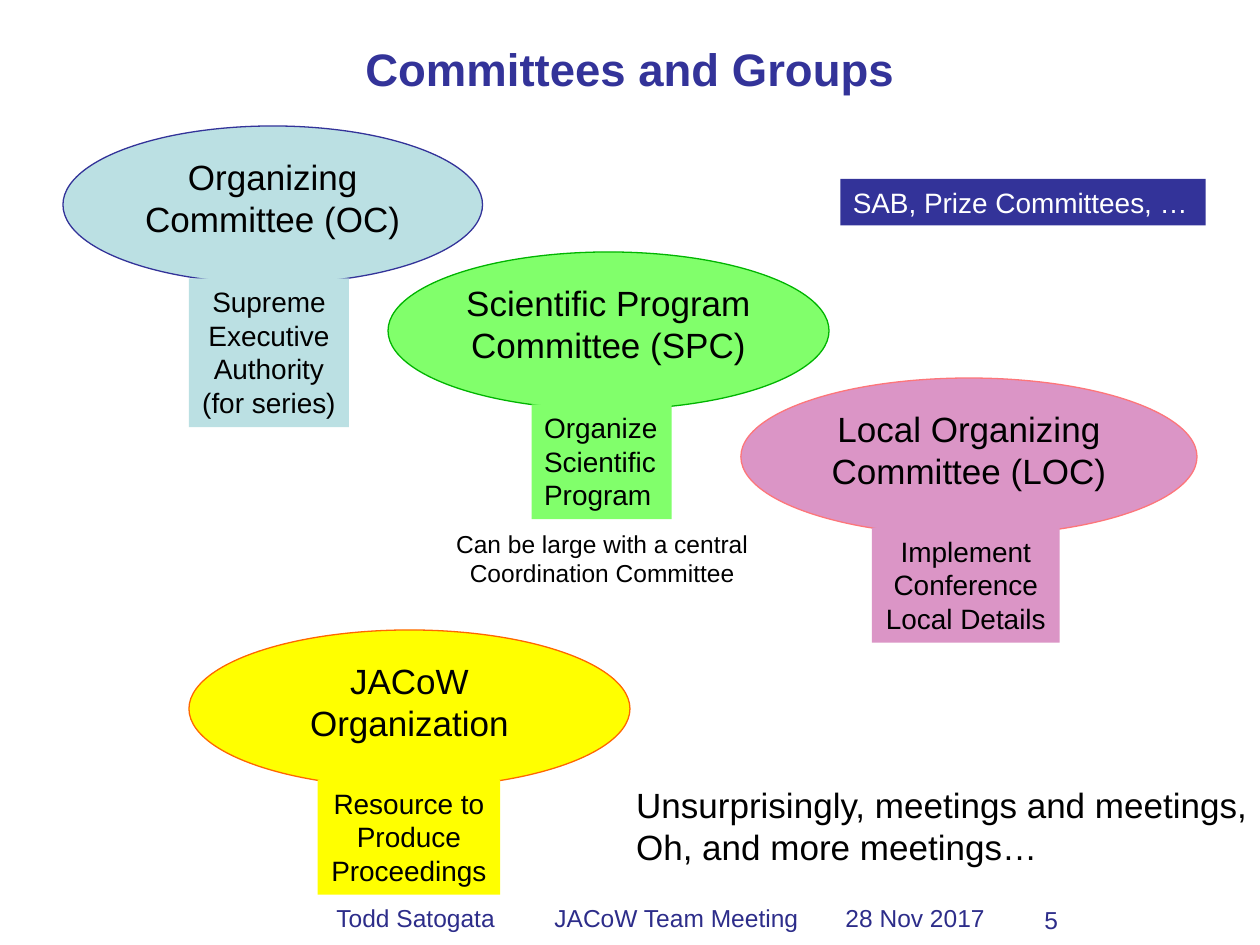
from lxml import etree
from pptx import Presentation
from pptx.dml.color import RGBColor
from pptx.enum import shapes, text
from pptx.oxml.ns import qn
from pptx.util import Inches, Pt

LEFT, CENTER = text.PP_ALIGN.LEFT, text.PP_ALIGN.CENTER
TOP, MIDDLE = text.MSO_ANCHOR.TOP, text.MSO_ANCHOR.MIDDLE
BLACK, NAVY, FOOTER_BLUE = "000000", "333399", "2D2D8A"


def color(value):
    return RGBColor.from_string(value)


def write(shape, lines, size, ink=BLACK, align=LEFT, anchor=TOP, wrap=False, bold=False):
    frame = shape.text_frame
    frame.word_wrap = wrap
    frame.vertical_anchor = anchor
    for index, line in enumerate(lines):
        para = frame.add_paragraph() if index else frame.paragraphs[0]
        para.alignment = align
        span = para.add_run()
        span.text = line
        span.font.name = "Arial"
        span.font.size = Pt(size)
        span.font.bold = bold
        span.font.color.rgb = color(ink)


def add_text(page, box, lines, size, **style):
    shape = page.shapes.add_textbox(*map(Inches, box))
    write(shape, lines, size, **style)
    return shape


def add_block(page, kind, box, fill, outline=None):
    shape = page.shapes.add_shape(kind, *map(Inches, box))
    shape.shadow.inherit = False
    shape.fill.solid()
    shape.fill.fore_color.rgb = color(fill)
    if outline:
        shape.line.color.rgb = color(outline)
        shape.line.width = Pt(0.75)
    else:
        shape.line.fill.background()
    return shape


def add_committee(page, box, name, fill, outline):
    oval = add_block(page, shapes.MSO_SHAPE.OVAL, box, fill, outline)
    write(oval, [name], 20, align=CENTER, wrap=True)


def add_label(page, box, lines, fill, ink=BLACK, align=LEFT):
    label = add_block(page, shapes.MSO_SHAPE.RECTANGLE, box, fill)
    write(label, lines, 16, ink, align)


def add_footer(page, box, parts, stops):
    footer = add_text(page, box, [], 14)
    footer.text_frame.margin_left = Inches(0.44)
    properties = footer.text_frame.paragraphs[0]._p.get_or_add_pPr()
    tabs = etree.SubElement(properties, qn("a:tabLst"))
    for stop in stops:
        etree.SubElement(tabs, qn("a:tab"), pos=str(Inches(stop)), algn="l")
    write(footer, ["\t".join(parts)], 14, FOOTER_BLUE, wrap=True)


def main():
    deck = Presentation()
    deck.slide_width, deck.slide_height = Inches(10), Inches(7.5)
    page = deck.slides.add_slide(deck.slide_layouts[6])

    add_text(page, (8.19, 7.13, 0.83, 0.34), ["5"], 14, ink=FOOTER_BLUE, wrap=True)
    add_footer(page, (2.23, 7.12, 6.05, 0.34),
               ["Todd Satogata", "JACoW Team Meeting", "28 Nov 2017"], [1.73, 4.04])
    add_text(page, (0.75, 0.17, 8.5, 0.75), ["Committees and Groups"], 26,
             ink=NAVY, align=CENTER, anchor=MIDDLE, wrap=True, bold=True)

    committees = [
        ("Organizing Committee (OC)", (0.5, 1, 3.33, 1.25), "BBE0E3", NAVY,
         ["Supreme", "Executive", "Authority", "(for series)"], (1.5, 2.21, 1.27, 1.18), CENTER),
        ("Scientific Program Committee (SPC)", (3.08, 2, 3.5, 1.25), "81FF6B", "00B500",
         ["Organize", "Scientific", "Program"], (4.22, 3.21, 1.11, 0.91), LEFT),
        ("Local Organizing Committee (LOC)", (5.88, 3, 3.62, 1.25), "DB95C6", "FD767A",
         ["Implement", "Conference", "Local Details"], (6.92, 4.19, 1.49, 0.91), CENTER),
        ("JACoW Organization", (1.5, 5, 3.5, 1.25), "FFFF00", "FF6600",
         ["Resource to", "Produce", "Proceedings"], (2.52, 6.19, 1.45, 0.91), CENTER),
    ]
    for name, oval_box, fill, outline, _, _, _ in committees:
        add_committee(page, oval_box, name, fill, outline)
    for _, _, fill, _, duties, label_box, align in committees:
        add_label(page, label_box, duties, fill, align=align)

    add_text(page, (4.95, 6.17, 5.09, 0.77),
             ["Unsurprisingly, meetings and meetings,", "Oh, and more meetings…"], 20)
    add_text(page, (3.51, 4.15, 2.54, 0.57),
             ["Can be large with a central", "Coordination Committee"], 14, align=CENTER)
    add_label(page, (6.67, 1.42, 2.9, 0.37), ["SAB, Prize Committees, …"], NAVY, "FFFFFF")

    deck.save("out.pptx")


if __name__ == "__main__":
    main()
